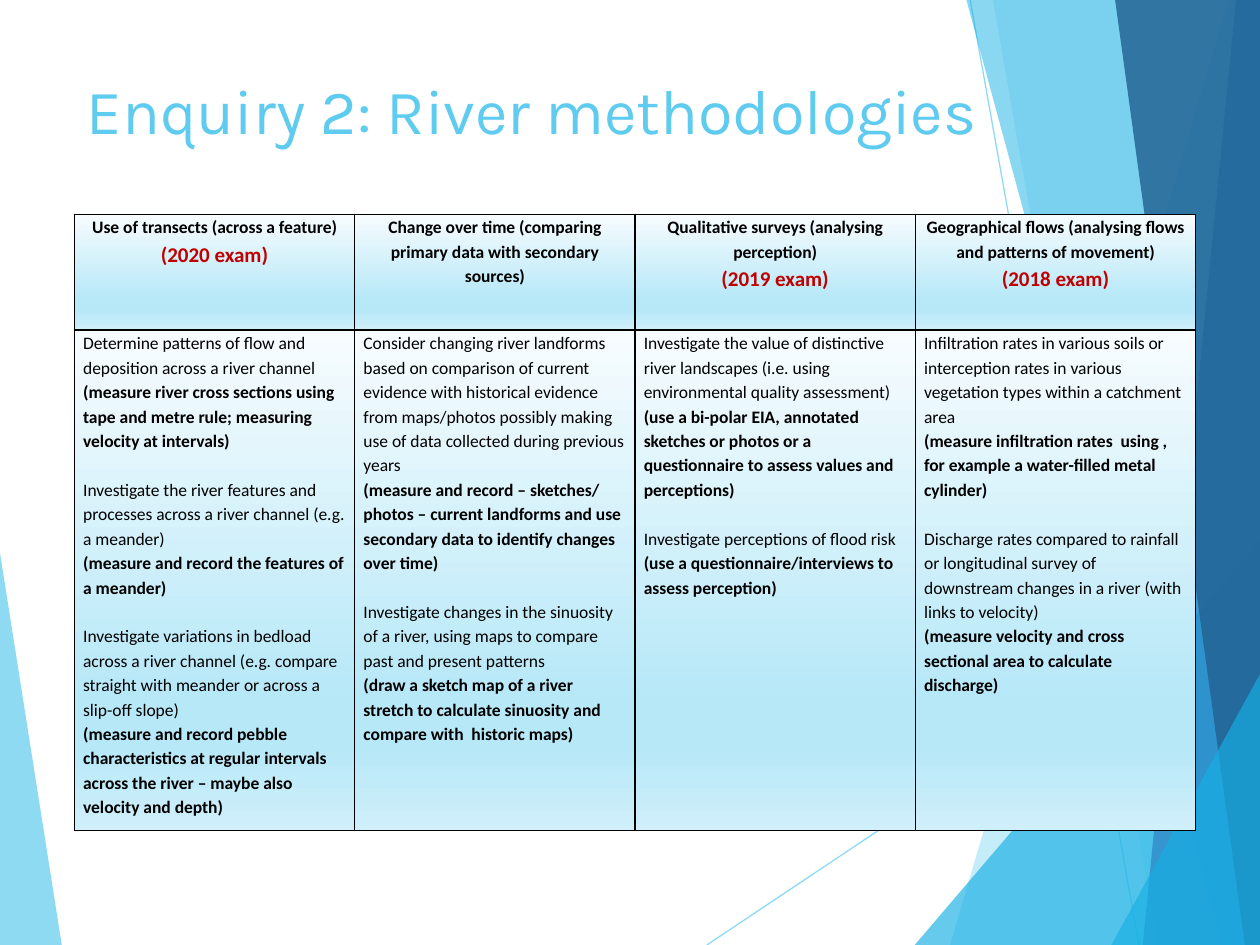
from lxml.etree import SubElement
from pptx import Presentation
from pptx.dml.color import RGBColor as Rgb
from pptx.enum.shapes import MSO_CONNECTOR as Connector
from pptx.enum.text import MSO_ANCHOR as Anchor, PP_ALIGN as Align
from pptx.oxml.ns import qn
from pptx.util import Inches, Pt

WIDTH, HEIGHT = Inches(10), Inches(7.5)
COLOURS = {
    "sky": "5FCBEF", "cyan": "17B0E4", "blue": "2E83C3", "navy": "226292",
    "text": "000000", "exam": "C00000",
}
GRADIENT = {0: "F7FCFE", 74: "B7E8F8", 83: "B7E8F8", 100: "CFEFFA"}
FACETS = [
    ("sky", 70, [(0, 58.53), (4.9, 100), (0, 100)]),
    ("sky", 36, [(97.5, 0), (75.4, 100), (100, 100), (100, 0)]),
    ("sky", 20, [(78.8, 0), (91.9, 100), (100, 100), (100, 0)]),
    ("cyan", 66, [(72.6, 100), (100, 57.2), (100, 100)]),
    ("cyan", 50, [(76.7, 0), (97, 100), (100, 100), (100, 0)]),
    ("blue", 70, [(98.1, 0), (90.7, 100), (100, 100), (100, 0)]),
    ("navy", 82, [(88.5, 0), (98.8, 100), (100, 100), (100, 0)]),
    ("cyan", 66, [(88.2, 100), (100, 71.33), (100, 100)]),
]
RAYS = [((56.1, 100), (100, 60.93)), ((77, 0), (90.4, 100))]
CELL_FORMAT = {"margin_left": Inches(0.07), "margin_right": Inches(0.07),
               "margin_top": 0, "margin_bottom": 0, "vertical_anchor": Anchor.TOP}
BODY_FONT = {"name": "Calibri", "size": Pt(10), "bold": False}
BOLD_FONT = BODY_FONT | {"bold": True}
EXAM_FONT = BOLD_FONT | {"size": Pt(12)}
ENQUIRIES = [
    ("Use of transects (across a feature)", "(2020 exam)", [
        ("Determine patterns of flow and deposition across a river channel",
         "(measure river cross sections using tape and metre rule; measuring velocity at intervals)"),
        ("Investigate the river features and processes across a river channel (e.g. a meander)",
         "(measure and record the features of a meander)"),
        ("Investigate variations in bedload across a river channel (e.g. compare straight with "
         "meander or across a slip-off slope)",
         "(measure and record pebble characteristics at regular intervals across the river – "
         "maybe also velocity and depth)"),
    ]),
    ("Change over time (comparing primary data with secondary sources)", None, [
        ("Consider changing river landforms based on comparison of current evidence with historical "
         "evidence from maps/photos possibly making use of data collected during previous years",
         "(measure and record – sketches/ photos – current landforms and use secondary data to "
         "identify changes over time)"),
        ("Investigate changes in the sinuosity of a river, using maps to compare past and present patterns",
         "(draw a sketch map of a river stretch to calculate sinuosity and compare with  historic maps)"),
    ]),
    ("Qualitative surveys (analysing perception)", "(2019 exam)", [
        ("Investigate the value of distinctive river landscapes (i.e. using environmental quality assessment)",
         "(use a bi-polar EIA, annotated sketches or photos or a questionnaire to assess values and perceptions)"),
        ("Investigate perceptions of flood risk",
         "(use a questionnaire/interviews to assess perception)"),
    ]),
    ("Geographical flows (analysing flows and patterns of movement)", "(2018 exam)", [
        ("Infiltration rates in various soils or interception rates in various vegetation types "
         "within a catchment area",
         "(measure infiltration rates  using , for example a water-filled metal cylinder)"),
        ("Discharge rates compared to rainfall or longitudinal survey of downstream changes in a "
         "river (with links to velocity)",
         "(measure velocity and cross sectional area to calculate discharge)"),
    ]),
]


def apply_format(target, values):
    """Set every attribute in values on the target."""
    for attribute, value in values.items():
        setattr(target, attribute, value)


def place(point):
    """Turn percentages of the slide's size into EMU."""
    return round(point[0] * WIDTH / 100), round(point[1] * HEIGHT / 100)


def set_opacity(drawn, percent):
    """Give the colours of a drawn element an opacity."""
    for colour in drawn._element.spPr.iter(qn("a:srgbClr")):
        SubElement(colour, qn("a:alpha"), val=str(percent * 1000))


def add_facet(slide, colour, opacity, corners):
    """Draw a translucent polygon of the backdrop."""
    first, *others = map(place, corners)
    builder = slide.shapes.build_freeform(*first)
    builder.add_line_segments(others)
    facet = builder.convert_to_shape()
    facet.shadow.inherit = False
    facet.fill.solid()
    facet.fill.fore_color.rgb = Rgb.from_string(COLOURS[colour])
    facet.line.fill.background()
    set_opacity(facet, opacity)


def add_ray(slide, start, end):
    """Draw a thin translucent line of the backdrop."""
    ray = slide.shapes.add_connector(Connector.STRAIGHT, *place(start), *place(end))
    ray.line.width = Pt(0.75)
    ray.line.color.rgb = Rgb.from_string(COLOURS["sky"])
    set_opacity(ray, 70)
    SubElement(ray._element.spPr, qn("a:effectLst"))


def write(paragraph, text, font, colour="text", **layout):
    """Write one formatted run into a paragraph."""
    apply_format(paragraph, layout)
    run = paragraph.add_run()
    run.text = text
    apply_format(run.font, font)
    run.font.color.rgb = Rgb.from_string(COLOURS[colour])


def add_title(slide, text):
    """Add the slide's heading."""
    heading = slide.shapes.add_textbox(*place((5.9, 6.93)), *place((76.4, 19.2)))
    apply_format(heading.text_frame, {"word_wrap": True, "vertical_anchor": Anchor.TOP})
    write(heading.text_frame.paragraphs[0], text, {"name": "Karla", "size": Pt(36)}, "sky")


def style_cell(cell):
    """Give a cell its margins, black borders and gradient."""
    apply_format(cell, CELL_FORMAT)
    properties = cell._tc.get_or_add_tcPr()
    for side in ("lnL", "lnR", "lnT", "lnB"):
        border = SubElement(properties, qn(f"a:{side}"), w=str(Pt(1)))
        ink = SubElement(border, qn("a:solidFill"))
        SubElement(ink, qn("a:srgbClr"), val=COLOURS["text"])
    gradient = SubElement(properties, qn("a:gradFill"), rotWithShape="1")
    stops = SubElement(gradient, qn("a:gsLst"))
    for position, colour in GRADIENT.items():
        stop = SubElement(stops, qn("a:gs"), pos=str(position * 1000))
        SubElement(stop, qn("a:srgbClr"), val=colour)
    SubElement(gradient, qn("a:lin"), ang="5400000", scaled="0")


def fill_heading(cell, topic, exam):
    """Write a topic and the year it was examined."""
    centred = {"alignment": Align.CENTER, "line_spacing": 1.15}
    frame = cell.text_frame
    write(frame.paragraphs[0], topic, BOLD_FONT, **centred)
    if exam:
        write(frame.add_paragraph(), exam, EXAM_FONT, "exam", **centred)


def fill_methods(cell, methods):
    """Write each investigation with its method in bold."""
    frame = cell.text_frame
    for number, (investigation, method) in enumerate(methods):
        paragraph = frame.add_paragraph() if number else frame.paragraphs[0]
        write(paragraph, investigation, BODY_FONT, alignment=Align.LEFT,
              line_spacing=1.15, space_before=Pt(14 if number else 0))
        write(frame.add_paragraph(), method, BOLD_FONT, alignment=Align.LEFT, line_spacing=1.15)


def add_enquiry_table(slide):
    """Add the table with one column per enquiry."""
    table = slide.shapes.add_table(2, len(ENQUIRIES), *place((5.9, 22.67)), *place((89, 65.2))).table
    apply_format(table, {"first_row": False, "horz_banding": False})
    for row, height in zip(table.rows, (0.92, 3.97)):
        row.height = Inches(height)
    for column, (topic, exam, methods) in enumerate(ENQUIRIES):
        heading, body = table.cell(0, column), table.cell(1, column)
        style_cell(heading)
        style_cell(body)
        fill_heading(heading, topic, exam)
        fill_methods(body, methods)


def main():
    """Build and save the slide."""
    deck = Presentation()
    apply_format(deck, {"slide_width": WIDTH, "slide_height": HEIGHT})
    slide = deck.slides.add_slide(deck.slide_layouts[6])
    add_facet(slide, *FACETS[0])
    for ray in RAYS:
        add_ray(slide, *ray)
    for facet in FACETS[1:]:
        add_facet(slide, *facet)
    add_title(slide, "Enquiry 2: River methodologies")
    add_enquiry_table(slide)
    deck.save("out.pptx")


if __name__ == "__main__":
    main()
